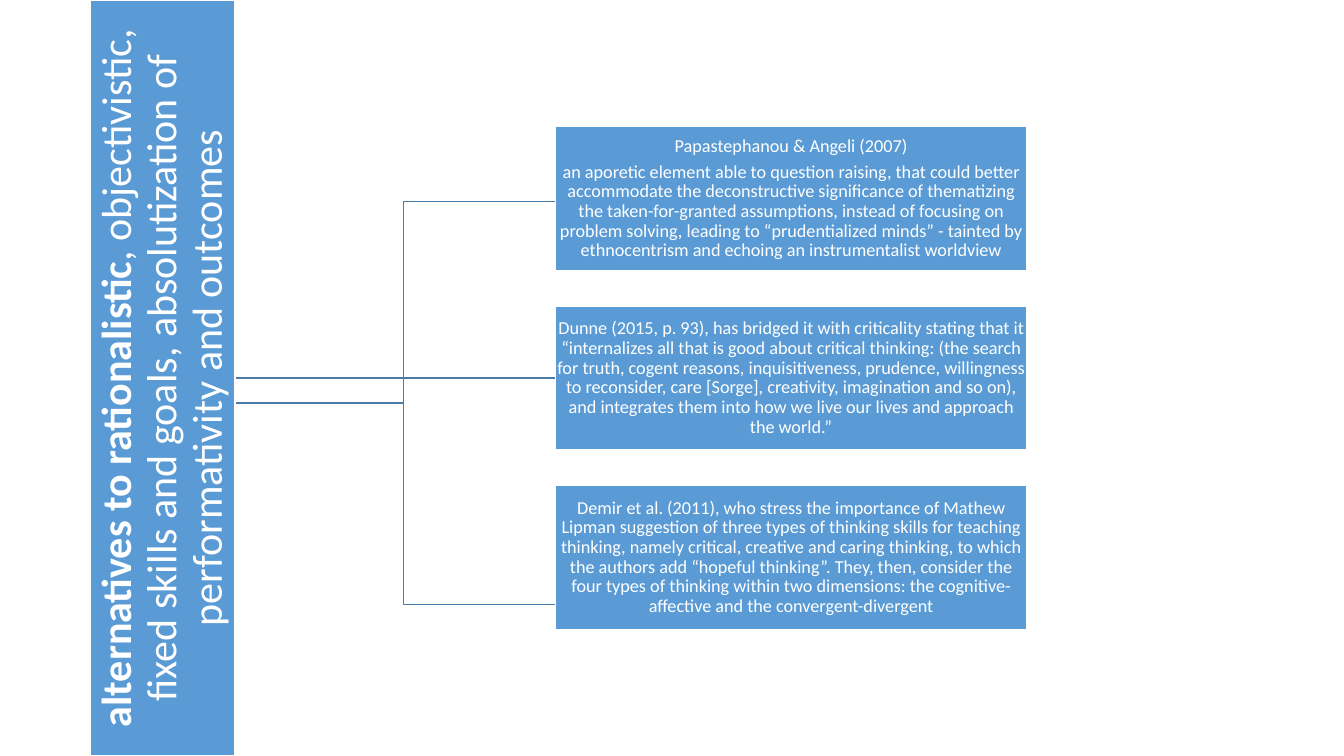
from pptx import Presentation
from pptx import util as u
from pptx.dml.color import RGBColor
from pptx.enum import shapes, text
from pptx.oxml.ns import qn
from lxml import etree

WIDE, HIGH = 13.33, 7.5
MID = HIGH / 2
PITCH, DEEP = 1.78, 1.43
ROOT, FORK, LEAF = 2.33, 3.92, 5.51
SPAN = 4.67
HUES = {"box": "5B9BD5", "edge": "FFFFFF", "link": "497CAB", "ink": "FFFFFF"}
TITLE = ("alternatives to rationalistic",
         ", objectivistic, fixed skills and goals, absolutization of "
         "performativity and outcomes")
VIEWS = (
    "Papastephanou & Angeli (2007)\n"
    "an aporetic element able to question raising, that could better "
    "accommodate the deconstructive significance of thematizing the "
    "taken-for-granted assumptions, instead of focusing on problem solving, "
    "leading to “prudentialized minds” - tainted by ethnocentrism and echoing "
    "an instrumentalist worldview",
    "Dunne (2015, p. 93), has bridged it with criticality stating that it "
    "“internalizes all that is good about critical thinking: (the search for "
    "truth, cogent reasons, inquisitiveness, prudence, willingness to "
    "reconsider, care [Sorge], creativity, imagination and so on), and "
    "integrates them into how we live our lives and approach the world.”",
    "Demir et al. (2011), who stress the importance of Mathew Lipman "
    "suggestion of three types of thinking skills for teaching thinking, "
    "namely critical, creative and caring thinking, to which the authors add "
    "“hopeful thinking”. They, then, consider the four types of thinking "
    "within two dimensions: the cognitive-affective and the "
    "convergent-divergent",
)


def hue(name):
    """Return a named colour."""
    return RGBColor.from_string(HUES[name])


def ink(line, name):
    """Set a one-point line in a named colour."""
    line.color.rgb = hue(name)
    line.width = u.Pt(1)


def box(slide, mid_x, mid_y, wide, words, pad):
    """Add a filled box around a centre point and return it."""
    card = slide.shapes.add_shape(
        shapes.MSO_SHAPE.RECTANGLE, u.Inches(mid_x - wide / 2),
        u.Inches(mid_y - DEEP / 2), u.Inches(wide), u.Inches(DEEP))
    card.shadow.inherit = False
    card.fill.solid()
    card.fill.fore_color.rgb = hue("box")
    ink(card.line, "edge")
    frame = card.text_frame
    frame.word_wrap = True
    frame.vertical_anchor = text.MSO_ANCHOR.MIDDLE
    frame.margin_left = frame.margin_right = u.Inches(pad)
    frame.margin_top = frame.margin_bottom = u.Inches(pad)
    frame.text = words
    return card


def style(frame, size):
    """Format every paragraph and run of a text frame."""
    for para in frame.paragraphs:
        para.alignment = text.PP_ALIGN.CENTER
        para.line_spacing = 0.9
        para.space_after = u.Pt(round(size * 0.35, 1))
        for run in para.runs:
            run.font.name = "Calibri"
            run.font.size = u.Pt(size)
            run.font.color.rgb = hue("ink")


def elbow(slide, row_y):
    """Draw a bent link from the title to a row."""
    pen = slide.shapes.build_freeform(ROOT, MID, scale=u.Inches(1))
    pen.add_line_segments(
        [(FORK, MID), (FORK, row_y), (LEAF, row_y)], close=False)
    link = pen.convert_to_shape()
    link.shadow.inherit = False
    link.fill.background()
    ink(link.line, "link")


def beam(slide):
    """Draw the straight link from the title to the middle row."""
    link = slide.shapes.add_connector(
        shapes.MSO_CONNECTOR.STRAIGHT, u.Inches(ROOT), u.Inches(MID),
        u.Inches(LEAF), u.Inches(MID))
    ink(link.line, "link")
    etree.SubElement(link._element.spPr, qn("a:effectLst"))


def banner(slide):
    """Add the upright title bar."""
    bar = box(slide, ROOT - DEEP / 2, MID, HIGH, TITLE[0], 0.02)
    bar.rotation = 270
    para = bar.text_frame.paragraphs[0]
    para.runs[0].font.bold = True
    para.add_run().text = TITLE[1]
    style(bar.text_frame, 30)


def main():
    """Build the slide and save it."""
    deck = Presentation()
    deck.slide_width, deck.slide_height = u.Inches(WIDE), u.Inches(HIGH)
    slide = deck.slides.add_slide(deck.slide_layouts[6])
    rows = [MID + (i - 1) * PITCH for i in range(len(VIEWS))]
    elbow(slide, rows[2])
    beam(slide)
    elbow(slide, rows[0])
    banner(slide)
    for row_y, words in zip(rows, VIEWS):
        card = box(slide, LEAF + SPAN / 2, row_y, SPAN, words, 0.01)
        style(card.text_frame, 13)
    deck.save("out.pptx")


if __name__ == "__main__":
    main()
